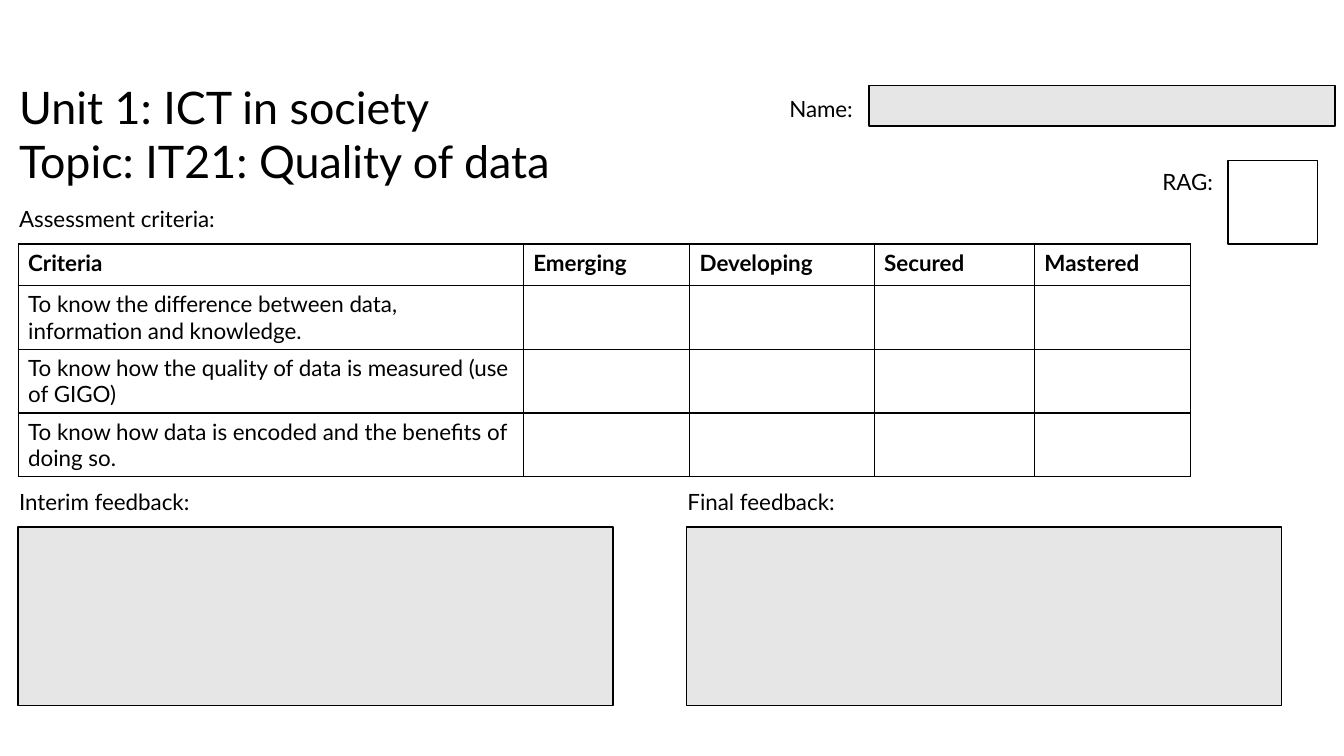
from lxml.etree import SubElement
from pptx import Presentation
from pptx.dml.color import RGBColor
from pptx.enum.shapes import MSO_SHAPE
from pptx.oxml.ns import qn
from pptx.util import Inches, Pt

FONT = "Lato"
BLACK, GREY, WHITE = "000000", "E7E6E6", "FFFFFF"

TITLE = ["Unit 1: ICT in society", "Topic: IT21: Quality of data"]
LABELS = [
    ("Assessment criteria:", 0.09, 1.99),
    ("Name:", 7.73, 0.89),
    ("Interim feedback:", 0.09, 4.79),
    ("Final feedback:", 6.72, 4.79),
    ("RAG:", 11.43, 1.62),
]
BOXES = [
    (8.62, 0.85, 4.62, 0.4, GREY),
    (0.18, 5.23, 5.9, 1.77, GREY),
    (6.81, 5.23, 5.9, 1.77, GREY),
    (12.18, 1.59, 0.89, 0.83, WHITE),
]
HEADINGS = ["Criteria", "Emerging", "Developing", "Secured", "Mastered"]
CRITERIA = [
    "To know the difference between data, information and knowledge.",
    "To know how the quality of data is measured (use of GIGO)",
    "To know how data is encoded and the benefits of doing so.",
]
COL_WIDTHS = [5.01, 1.65, 1.83, 1.59, 1.55]
HEAD_HEIGHT, ROW_HEIGHT = 0.41, 0.63


def color(value):
    return RGBColor.from_string(value)


def write(tf, lines, size, bold=False):
    tf.text = "\n".join(lines)
    tf.word_wrap = True
    for p in tf.paragraphs:
        p.font.size = Pt(size)
        for r in p.runs:
            r.font.name = FONT
            r.font.size = Pt(size)
            r.font.bold = bold
            r.font.color.rgb = color(BLACK)


def add_text(s, lines, x, y, w, h, size):
    sp = s.shapes.add_textbox(Inches(x), Inches(y), Inches(w), Inches(h))
    write(sp.text_frame, lines, size)


def add_box(s, x, y, w, h, fill):
    sp = s.shapes.add_shape(MSO_SHAPE.RECTANGLE, Inches(x), Inches(y), Inches(w), Inches(h))
    sp.shadow.inherit = False
    sp.fill.solid()
    sp.fill.fore_color.rgb = color(fill)
    sp.line.color.rgb = color(BLACK)
    sp.line.width = Pt(1)


def add_borders(cell):
    tc_pr = cell._tc.get_or_add_tcPr()
    for side in ("lnL", "lnR", "lnT", "lnB"):
        ln = SubElement(tc_pr, qn("a:" + side), w=str(Pt(1)))
        fill = SubElement(ln, qn("a:solidFill"))
        SubElement(fill, qn("a:srgbClr"), val=BLACK)


def add_criteria_table(s, x, y):
    rows = [HEADINGS] + [[c] + [""] * (len(HEADINGS) - 1) for c in CRITERIA]
    heights = [HEAD_HEIGHT] + [ROW_HEIGHT] * len(CRITERIA)
    frame = s.shapes.add_table(len(rows), len(HEADINGS), Inches(x), Inches(y),
                               Inches(sum(COL_WIDTHS)), Inches(sum(heights)))
    table = frame.table
    table.first_row = False
    table.horz_banding = False
    for col, width in zip(table.columns, COL_WIDTHS):
        col.width = Inches(width)
    for i, (row, height) in enumerate(zip(rows, heights)):
        table.rows[i].height = Inches(height)
        for j, text in enumerate(row):
            cell = table.cell(i, j)
            write(cell.text_frame, [text], 16, bold=i == 0)
            add_borders(cell)
            cell.fill.background()


def main():
    prs = Presentation()
    prs.slide_width, prs.slide_height = Inches(13.33), Inches(7.5)
    s = prs.slides.add_slide(prs.slide_layouts[6])
    add_text(s, TITLE, 0.09, 0.74, 13.15, 1.18, 32)
    for box in BOXES:
        add_box(s, *box)
    add_criteria_table(s, 0.18, 2.42)
    for text, x, y in LABELS:
        add_text(s, [text], x, y, 4.71, 0.37, 16)
    prs.save("out.pptx")


if __name__ == "__main__":
    main()
